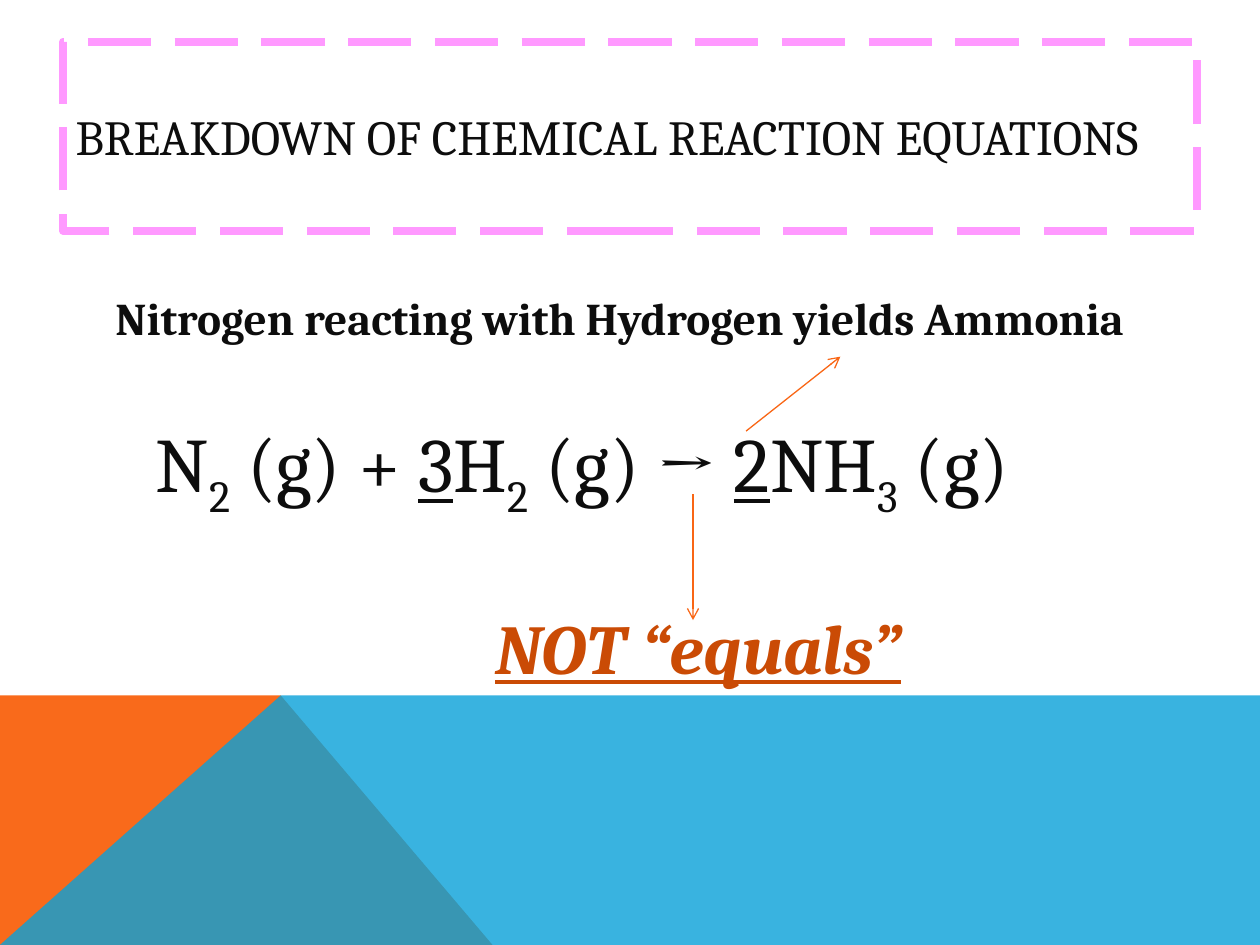
from lxml import etree
from pptx import Presentation
from pptx.dml.color import RGBColor
from pptx.enum.dml import MSO_LINE
from pptx.enum.shapes import MSO_CONNECTOR
from pptx.enum.text import MSO_ANCHOR, PP_ALIGN
from pptx.oxml.ns import qn
from pptx.util import Cm, Pt

LEFT, CENTER = PP_ALIGN.LEFT, PP_ALIGN.CENTER
MIDDLE = MSO_ANCHOR.MIDDLE
DASH = MSO_LINE.LONG_DASH
STRAIGHT = MSO_CONNECTOR.STRAIGHT
FONT = "Cambria"
COLORS = {"ink": "0D0D0D", "pink": "FF99FF", "orange": "F96A1B",
          "blue": "08A1D9", "arrow": "F96615", "rust": "CA4B05"}


def color(name):
    """Return the named colour."""
    return RGBColor.from_string(COLORS[name])


def style(run, size, ink="ink", bold=False, italic=False, under=False):
    """Format one run of text."""
    font = run.font
    font.name, font.size = FONT, Pt(size)
    font.bold, font.italic, font.underline = bold, italic, under
    font.color.rgb = color(ink)


def add_text(slide, box):
    """Add a wrapping text box and return its first paragraph."""
    frame = slide.shapes.add_textbox(*map(Cm, box)).text_frame
    frame.word_wrap = True
    return frame.paragraphs[0]


def add_title(slide, box):
    """Place the dashed title."""
    title = slide.shapes.title
    title.left, title.top, title.width, title.height = map(Cm, box)
    title.line.color.rgb = color("pink")
    title.line.width = Pt(4.5)
    title.line.dash_style = DASH
    frame = title.text_frame
    frame.text = "BREAKDOWN OF CHEMICAL REACTION EQUATIONS"
    frame.vertical_anchor = MIDDLE
    para = frame.paragraphs[0]
    para.alignment = LEFT
    style(para.runs[0], 28)


def add_words(slide, box):
    """Place the reaction in words."""
    para = add_text(slide, box)
    para.text = "Nitrogen reacting with Hydrogen yields Ammonia"
    para.alignment = CENTER
    para.space_before = Pt(8)
    style(para.runs[0], 25.9, bold=True)


def add_formula(slide, box):
    """Place the formula with its subscripts and underlined factors."""
    para = add_text(slide, box)
    para._p.get_or_add_pPr().set("marL", str(Cm(0.55)))
    parts = [("N", ""), ("2", "sub"), (" (g) + ", ""), ("3", "under"),
             ("H", ""), ("2", "sub"), (" (g) → ", ""), ("2", "under"),
             ("NH", ""), ("3", "sub"), (" (g)", "")]
    for text, kind in parts:
        run = para.add_run()
        run.text = text
        style(run, 44, under=kind == "under")
        if kind == "sub":
            run._r.get_or_add_rPr().set("baseline", "-25000")


def add_note(slide, box):
    """Place the warning about the arrow."""
    para = add_text(slide, box)
    para.text = "NOT “equals”"
    style(para.runs[0], 40, "rust", bold=True, italic=True, under=True)


def add_arrow(slide, start, end):
    """Draw a thin arrow between two points."""
    arrow = slide.shapes.add_connector(STRAIGHT, *map(Cm, start + end))
    arrow.line.color.rgb = color("arrow")
    arrow.line.width = Pt(0.75)
    tail = etree.SubElement(arrow.line._get_or_add_ln(), qn("a:tailEnd"))
    tail.set("type", "arrow")
    etree.SubElement(arrow._element.spPr, qn("a:effectLst"))


def add_shard(slide, points, fill):
    """Draw a filled polygon and return it."""
    first, *rest = [(Cm(x), Cm(y)) for x, y in points]
    maker = slide.shapes.build_freeform(*first)
    maker.add_line_segments(rest)
    shard = maker.convert_to_shape()
    shard.shadow.inherit = False
    shard.fill.solid()
    shard.fill.fore_color.rgb = color(fill)
    shard.line.fill.background()
    return shard


def add_band(slide, box):
    """Draw the two overlapping shards along the foot."""
    left, top, width, height = box
    peak, foot = left + 5.66, left + 9.93
    right, base = left + width, top + height
    add_shard(slide, [(left, base), (left, top), (peak, top), (foot, base)],
              "orange")
    sheet = add_shard(slide, [(left, base), (peak, top), (right, top),
                              (right, base)], "blue")
    tint = sheet._element.spPr.find(qn("a:solidFill"))[0]
    etree.SubElement(tint, qn("a:alpha")).set("val", "80000")


def main():
    """Build and save the slide."""
    deck = Presentation()
    deck.slide_width, deck.slide_height = Cm(25.4), Cm(19.05)
    slide = deck.slides.add_slide(deck.slide_layouts[5])
    add_band(slide, (0, 14.02, 25.4, 5.03))
    add_title(slide, (1.27, 0.84, 22.86, 3.81))
    add_words(slide, (1.7, 5.72, 21.59, 1.9))
    add_formula(slide, (2.34, 8.26, 20.12, 4.01))
    add_arrow(slide, (15.04, 8.69), (16.94, 7.19))
    add_note(slide, (9.73, 12.07, 11, 1.95))
    add_arrow(slide, (13.97, 9.96), (13.97, 12.5))
    deck.save("out.pptx")


if __name__ == "__main__":
    main()
